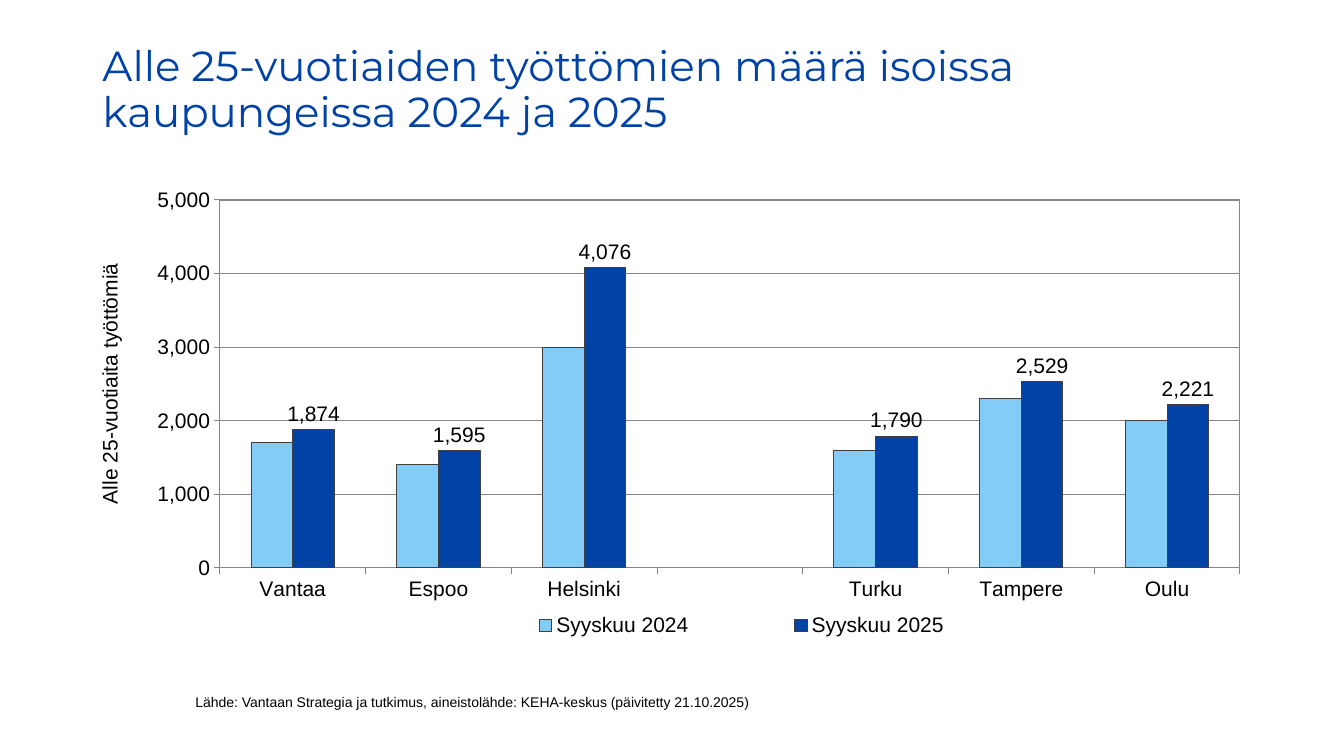
import dataclasses

import pptx
import pptx.chart.data
import pptx.dml.color
import pptx.enum.chart
import pptx.enum.text
import pptx.oxml
import pptx.oxml.ns
import pptx.util

Pt = pptx.util.Pt


@dataclasses.dataclass(frozen=True)
class Theme:
    """Colours, fonts and type sizes of the slide."""
    title_color: str = "0042A6"
    text_color: str = "000000"
    grid_color: str = "868686"
    bar_line: str = "404040"
    bar_colors: tuple = ("84CCF8", "0042A5")
    title_font: str = "Montserrat"
    body_font: str = "Arial"
    title_size: int = 30
    chart_size: int = 15
    source_size: int = 10


THEME = Theme()
CITIES = ("Vantaa", "Espoo", "Helsinki", "", "Turku", "Tampere", "Oulu")
UNEMPLOYED = {
    "Syyskuu 2024": (1700, 1400, 3000, None, 1600, 2300, 2000),
    "Syyskuu 2025": (1874, 1595, 4076, None, 1790, 2529, 2221),
}


def rgb(color):
    """Turn a hex string into a colour."""
    return pptx.dml.color.RGBColor.from_string(color)


def style_font(font, name, size, color):
    """Set the face, size and colour of a font."""
    font.name, font.size, font.bold = name, Pt(size), False
    font.color.rgb = rgb(color)


def style_line(line, color):
    """Set the colour and width of a chart line."""
    line.color.rgb = rgb(color)
    line.width = Pt(0.75)


def place(shape, box):
    """Move a shape into a box of left, top, width and height."""
    shape.left, shape.top, shape.width, shape.height = (Pt(length) for length in box)


def set_layout(element, inner=False, **fractions):
    """Give a chart part a fixed place, in fractions of the chart."""
    target = '<c:layoutTarget val="inner"/>' if inner else ""
    modes = "".join(f'<c:{key}Mode val="edge"/>' for key in ("x", "y"))
    values = "".join(f'<c:{key} val="{value}"/>' for key, value in fractions.items())
    layout = pptx.oxml.parse_xml(
        f'<c:layout {pptx.oxml.ns.nsdecls("c")}><c:manualLayout>'
        f"{target}{modes}{values}</c:manualLayout></c:layout>")
    for old in element.findall(pptx.oxml.ns.qn("c:layout")):
        element.remove(old)
    before = ("c:tx", "c:legendPos")
    index = sum(child.tag in map(pptx.oxml.ns.qn, before) for child in element)
    element.insert(index, layout)


def add_title(slide, box):
    """Fill the title placeholder."""
    title = slide.shapes.title
    place(title, box)
    frame = title.text_frame
    frame.word_wrap = True
    frame.auto_size = pptx.enum.text.MSO_AUTO_SIZE.NONE
    frame.vertical_anchor = pptx.enum.text.MSO_ANCHOR.TOP
    paragraph = frame.paragraphs[0]
    paragraph.alignment = pptx.enum.text.PP_ALIGN.LEFT
    paragraph.line_spacing = 0.9
    run = paragraph.add_run()
    run.text = "Alle 25-vuotiaiden työttömien määrä isoissa kaupungeissa 2024 ja 2025"
    style_font(run.font, THEME.title_font, THEME.title_size, THEME.title_color)


def add_source(slide, box):
    """Add the source line under the chart."""
    frame = slide.shapes.add_textbox(*(Pt(length) for length in box)).text_frame
    frame.word_wrap = True
    run = frame.paragraphs[0].add_run()
    run.text = ("Lähde: Vantaan Strategia ja tutkimus, aineistolähde: "
                "KEHA-keskus (päivitetty 21.10.2025)")
    style_font(run.font, THEME.body_font, THEME.source_size, THEME.text_color)


def style_axes(chart):
    """Format both axes, the gridlines and the axis title."""
    outside = pptx.enum.chart.XL_TICK_MARK.OUTSIDE
    for axis in (chart.category_axis, chart.value_axis):
        axis.major_tick_mark = outside
        style_line(axis.format.line, THEME.grid_color)
    axis = chart.value_axis
    axis.minimum_scale, axis.maximum_scale, axis.major_unit = 0, 5000, 1000
    axis.tick_labels.number_format = "#,##0"
    axis.tick_labels.number_format_is_linked = False
    style_line(axis.major_gridlines.format.line, THEME.grid_color)
    run = axis.axis_title.text_frame.paragraphs[0].add_run()
    run.text = "Alle 25-vuotiaita työttömiä"
    style_font(run.font, THEME.body_font, THEME.chart_size, THEME.text_color)
    set_layout(axis.axis_title._element, x=0, y=0.16)


def style_bars(plot):
    """Colour the bars and label the last series."""
    plot.gap_width, plot.overlap, plot.vary_by_categories = 150, 0, False
    for series, color in zip(plot.series, THEME.bar_colors):
        series.format.fill.solid()
        series.format.fill.fore_color.rgb = rgb(color)
        style_line(series.format.line, THEME.bar_line)
    labels = plot.series[-1].data_labels
    labels.show_value = True
    labels.number_format, labels.number_format_is_linked = "#,##0", False
    labels.position = pptx.enum.chart.XL_LABEL_POSITION.OUTSIDE_END
    style_font(labels.font, THEME.body_font, THEME.chart_size, THEME.text_color)


def add_city_chart(slide, box):
    """Add the column chart of unemployed people by city."""
    data = pptx.chart.data.CategoryChartData()
    data.categories = CITIES
    for name, values in UNEMPLOYED.items():
        data.add_series(name, values)
    kind = pptx.enum.chart.XL_CHART_TYPE.COLUMN_CLUSTERED
    chart = slide.shapes.add_chart(kind, *(Pt(length) for length in box), data).chart
    chart.has_title = False
    style_font(chart.font, THEME.body_font, THEME.chart_size, THEME.text_color)
    style_axes(chart)
    style_bars(chart.plots[0])
    chart.has_legend = True
    chart.legend.position = pptx.enum.chart.XL_LEGEND_POSITION.BOTTOM
    chart.legend.include_in_layout = False
    set_layout(chart.legend._element, x=0.3, y=0.92, w=0.52, h=0.07)
    plot_area = chart._chartSpace.chart.plotArea
    set_layout(plot_area, inner=True, x=0.11, y=0.03, w=0.88, h=0.8)
    plot_area.append(pptx.oxml.parse_xml(
        f'<c:spPr {pptx.oxml.ns.nsdecls("c", "a")}><a:noFill/><a:ln w="9525">'
        f'<a:solidFill><a:srgbClr val="{THEME.grid_color}"/></a:solidFill>'
        "</a:ln></c:spPr>"))


def main():
    """Build the slide and save it."""
    presentation = pptx.Presentation()
    presentation.slide_width, presentation.slide_height = Pt(960), Pt(540)
    slide = presentation.slides.add_slide(presentation.slide_layouts[5])
    add_title(slide, (66, 29, 828, 104))
    add_city_chart(slide, (66, 133, 828, 328.5))
    add_source(slide, (132.5, 492, 413, 29))
    presentation.save("out.pptx")


if __name__ == "__main__":
    main()
